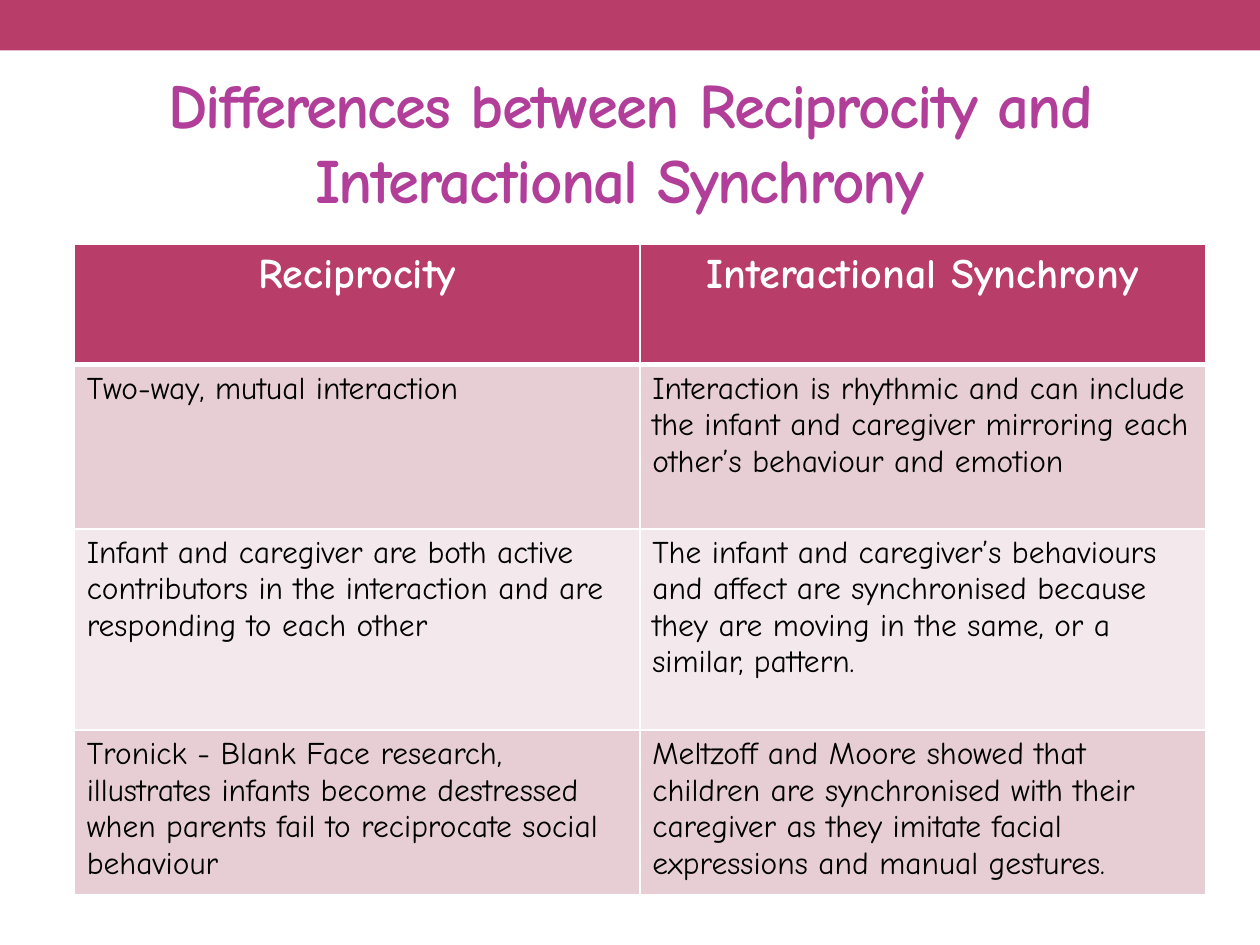
from lxml import etree
from pptx import Presentation
from pptx.dml.color import RGBColor
from pptx.enum.shapes import MSO_SHAPE
from pptx.enum.text import MSO_ANCHOR, PP_ALIGN
from pptx.oxml.ns import qn
from pptx.util import Cm, Pt

RECTANGLE = MSO_SHAPE.RECTANGLE
MIDDLE, TOP = MSO_ANCHOR.MIDDLE, MSO_ANCHOR.TOP
LEFT, CENTER = PP_ALIGN.LEFT, PP_ALIGN.CENTER

FONT = "Comic Neue"
COLORS = {
    "berry": "B83D68",
    "title": "B13F9A",
    "band_dark": "E6CED4",
    "band_light": "F3E8EB",
    "white": "FFFFFF",
    "black": "000000",
}


def write_text(frame, text, size=18, color="black", bold=False,
               align=LEFT, anchor=TOP, spacing=None):
    frame.word_wrap = True
    frame.vertical_anchor = anchor
    para = frame.paragraphs[0]
    para.alignment = align
    span = para.add_run()
    span.text = text
    span.font.name = FONT
    span.font.size = Pt(size)
    span.font.bold = bold
    span.font.color.rgb = RGBColor.from_string(COLORS[color])
    if spacing is not None:
        span.font._element.set("spc", str(spacing))


def add_border(cell, side, width):
    line = etree.SubElement(cell._tc.get_or_add_tcPr(), qn(f"a:{side}"),
                            w=str(Pt(width)))
    fill = etree.SubElement(line, qn("a:solidFill"))
    etree.SubElement(fill, qn("a:srgbClr"), val=COLORS["white"])


deck = Presentation()
deck.slide_width, deck.slide_height = Cm(25.4), Cm(19.05)
page = deck.slides.add_slide(deck.slide_layouts[6])

# Top band
band = page.shapes.add_shape(RECTANGLE, 0, 0, deck.slide_width, Cm(1.02))
band.shadow.inherit = False
band.fill.solid()
band.fill.fore_color.rgb = RGBColor.from_string(COLORS["berry"])
band.line.fill.background()

# Title; its closing space counts in the centring of the second line
title = page.shapes.add_textbox(Cm(1.27), Cm(1.47), Cm(22.86), Cm(2.74))
write_text(title.text_frame,
           "Differences between Reciprocity and Interactional Synchrony ",
           size=36, color="title", bold=True, align=CENTER, anchor=MIDDLE,
           spacing=-100)

# Comparison table
rows = [
    ("Reciprocity", "Interactional Synchrony"),
    ("Two-way, mutual interaction",
     "Interaction is rhythmic and can include the infant and caregiver "
     "mirroring each other’s behaviour and emotion"),
    ("Infant and caregiver are both active contributors in the interaction "
     "and are responding to each other",
     "The infant and caregiver’s behaviours and affect are synchronised "
     "because they are moving in the same, or a similar, pattern."),
    ("Tronick - Blank Face research, illustrates infants become destressed "
     "when parents fail to reciprocate social behaviour",
     "Meltzoff and Moore showed that children are synchronised with their "
     "caregiver as they imitate facial expressions and manual gestures."),
]
row_heights = [2.42, 3.31, 4.06, 3.31]
row_fills = ["berry", "band_dark", "band_light", "band_dark"]
header_format = {"size": 24, "color": "white", "bold": True, "align": CENTER}

table = page.shapes.add_table(len(rows), 2, Cm(1.5), Cm(4.93),
                              Cm(22.8), Cm(sum(row_heights))).table
for column in table.columns:
    column.width = Cm(11.4)

for r, texts in enumerate(rows):
    table.rows[r].height = Cm(row_heights[r])
    for c, text in enumerate(texts):
        cell = table.cell(r, c)
        write_text(cell.text_frame, text, **(header_format if r == 0 else {}))
        cell.margin_left = cell.margin_right = Cm(0.25)
        cell.margin_top = cell.margin_bottom = Cm(0.13)
        # The rule under the header is thicker than the rest
        for side in ("lnL", "lnR", "lnT", "lnB"):
            thick = (r, side) in ((0, "lnB"), (1, "lnT"))
            add_border(cell, side, 3 if thick else 1)
        cell.fill.solid()
        cell.fill.fore_color.rgb = RGBColor.from_string(COLORS[row_fills[r]])

deck.save("out.pptx")
